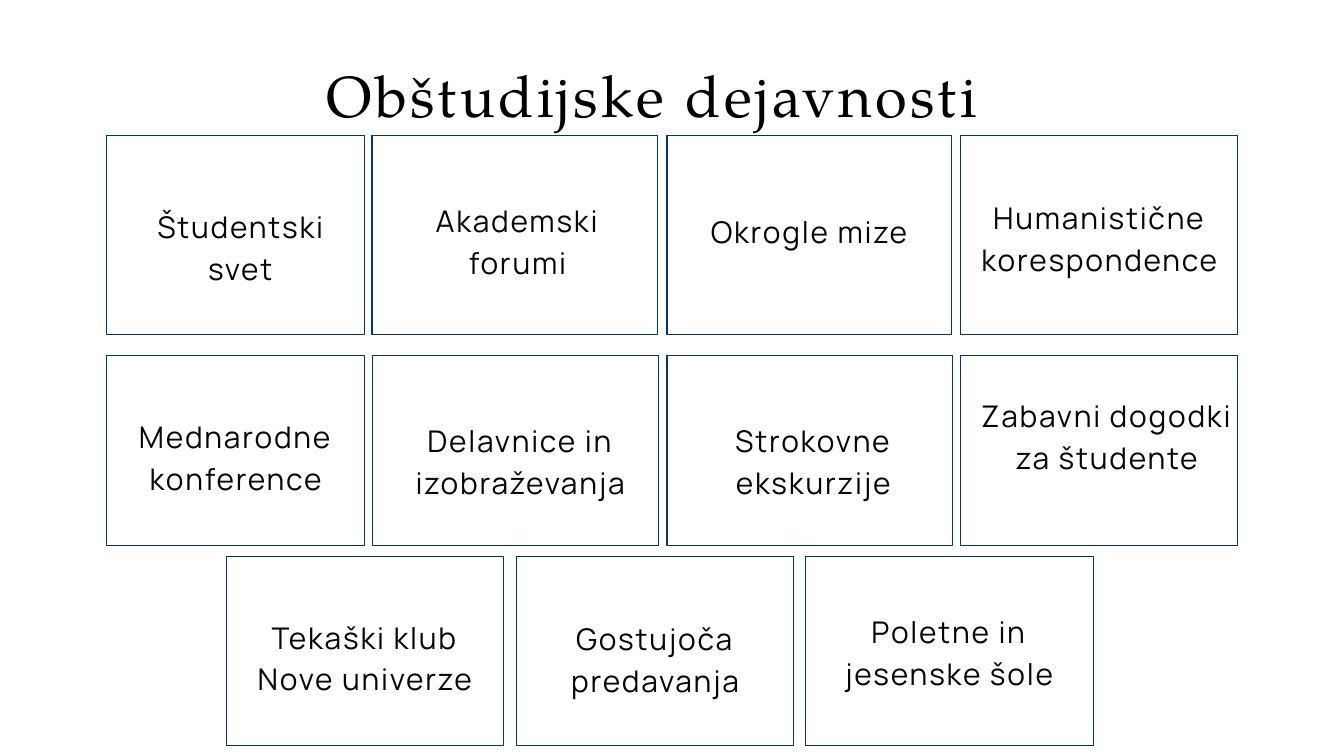
from pptx import Presentation
from pptx.dml.color import RGBColor
from pptx.enum.shapes import MSO_SHAPE
from pptx.enum.text import MSO_ANCHOR, MSO_AUTO_SIZE, PP_ALIGN
from pptx.util import Pt

NAVY = RGBColor(0x00, 0x37, 0x67)
INK = RGBColor(0x05, 0x07, 0x07)
BLACK = RGBColor(0x00, 0x00, 0x00)

BORDER = 1.2
LABEL_WIDTH = 283
LABEL_HEIGHT = 88

# Each row: top, height, (left, width) of its columns, and for each card
# its label, the label's drop from the card top and its shift off centre.
ROWS = [
    (145, 214, [(114, 277), (398, 307), (714, 306), (1029, 298)], [
        ("Študentski\nsvet", 72, 5),
        ("Akademski forumi", 66, 3),
        ("Okrogle mize", 77, 0),
        ("Humanistične korespondence", 63, 0),
    ]),
    (380, 205, [(114, 277), (399, 307), (714, 307), (1029, 298)], [
        ("Mednarodne konference", 62, 0),
        ("Delavnice in izobraževanja", 67, 5),
        ("Strokovne ekskurzije", 67, 4),
        ("Zabavni dogodki za študente", 40, 8),
    ]),
    (596, 203, [(242, 298), (553, 298), (862, 310)], [
        ("Tekaški klub Nove univerze", 61, 0),
        ("Gostujoča predavanja", 63, 0),
        ("Poletne in jesenske šole", 55, 0),
    ]),
]


def write_centred(frame, text, font_name, size, line_spacing, tracking, color):
    frame.margin_left = frame.margin_right = 0
    frame.margin_top = frame.margin_bottom = 0
    frame.word_wrap = True
    frame.vertical_anchor = MSO_ANCHOR.TOP
    frame.text = text
    for paragraph in frame.paragraphs:
        paragraph.alignment = PP_ALIGN.CENTER
        paragraph.line_spacing = Pt(line_spacing)
        paragraph.space_before = Pt(0)
        for run in paragraph.runs:
            run.font.name = font_name
            run.font.size = Pt(size)
            run.font.color.rgb = color
            run._r.get_or_add_rPr().set("spc", str(round(tracking * 100)))


def place_title(slide, left, top, width, height):
    title = slide.shapes.title
    title.left, title.top = Pt(left), Pt(top)
    title.width, title.height = Pt(width), Pt(height)
    title.text_frame.auto_size = MSO_AUTO_SIZE.NONE
    write_centred(title.text_frame, "Obštudijske dejavnosti",
                  "TeX Gyre Pagella", 62, 86.8, 3.7, BLACK)


def add_activity_card(slide, left, top, width, height, activity, drop, shift):
    border = slide.shapes.add_shape(
        MSO_SHAPE.RECTANGLE,
        Pt(left + BORDER / 2), Pt(top + BORDER / 2),
        Pt(width - BORDER), Pt(height - BORDER))
    border.shadow.inherit = False
    border.fill.background()
    border.line.color.rgb = NAVY
    border.line.width = Pt(BORDER)

    label_left = left + (width - LABEL_WIDTH) / 2 + shift
    label = slide.shapes.add_textbox(
        Pt(label_left), Pt(top + drop), Pt(LABEL_WIDTH), Pt(LABEL_HEIGHT))
    write_centred(label.text_frame, activity, "Manrope", 32, 44.8, 1.9, INK)


def add_activity_row(slide, top, height, columns, activities):
    for (left, width), (activity, drop, shift) in zip(columns, activities):
        add_activity_card(slide, left, top, width, height,
                          activity, drop, shift)


def main():
    presentation = Presentation()
    presentation.slide_width = Pt(1440)
    presentation.slide_height = Pt(810)
    slide = presentation.slides.add_slide(presentation.slide_layouts[5])
    place_title(slide, 294.5, 52, 809, 81)
    for row in ROWS:
        add_activity_row(slide, *row)
    presentation.save("out.pptx")


if __name__ == "__main__":
    main()
